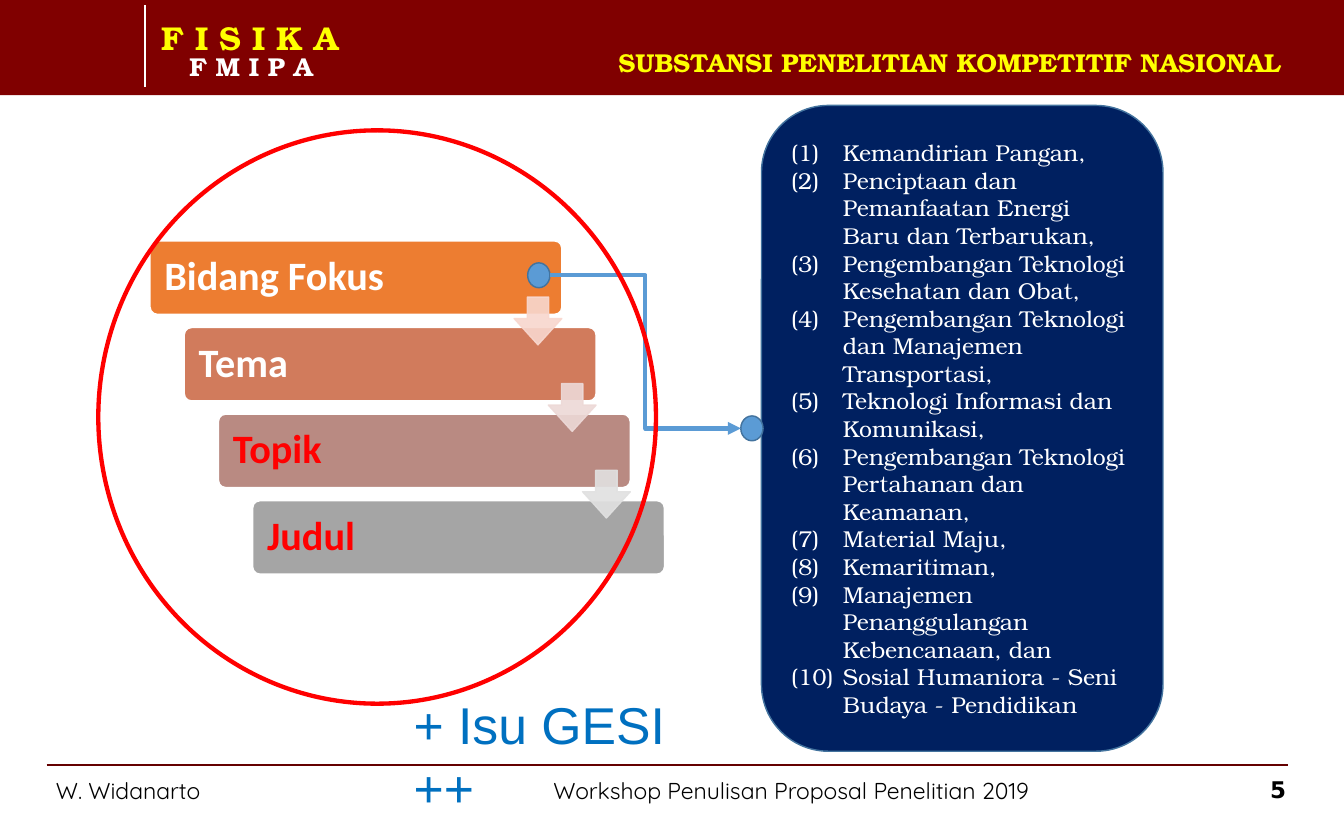
import pptx
import pptx.util
import pptx.dml.color
import pptx.enum.shapes
import pptx.enum.text
import pptx.oxml.ns
import lxml.etree

Pt = pptx.util.Pt
SHAPE = pptx.enum.shapes.MSO_SHAPE
CONNECTOR = pptx.enum.shapes.MSO_CONNECTOR
ALIGN = pptx.enum.text.PP_ALIGN
ANCHOR = pptx.enum.text.MSO_ANCHOR
qn = pptx.oxml.ns.qn

# Content
TITLE = "SUBSTANSI PENELITIAN KOMPETITIF NASIONAL"
UNIT = [("F I S I K A", 23, "yellow", ALIGN.LEFT), ("F M I P A", 18, "white", ALIGN.CENTER)]
AUTHOR = "W. Widanarto"
EVENT = "Workshop Penulisan Proposal Penelitian 2019"
PAGE = "5"
ISSUE = "+ Isu GESI ++"
# label, bar colour, text colour, colour of the arrow below
STEPS = [
    ("Bidang Fokus", "orange", "white", "arrow1"),
    ("Tema", "terracotta", "white", "arrow2"),
    ("Topik", "rose", "red", "arrow3"),
    ("Judul", "grey", "red", None),
]
FOCUS_AREAS = [
    "Kemandirian Pangan,",
    "Penciptaan dan Pemanfaatan Energi Baru dan Terbarukan,",
    "Pengembangan Teknologi Kesehatan dan Obat,",
    "Pengembangan Teknologi dan Manajemen Transportasi,",
    "Teknologi Informasi dan Komunikasi,",
    "Pengembangan Teknologi Pertahanan dan Keamanan,",
    "Material Maju,",
    "Kemaritiman,",
    "Manajemen Penanggulangan Kebencanaan, dan",
    "Sosial Humaniora - Seni Budaya - Pendidikan",
]
COLORS = {
    "maroon": "800000", "rule": "640000", "yellow": "FFFF00", "white": "FFFFFF",
    "black": "000000", "red": "FF0000", "orange": "ED7D31", "terracotta": "D17B5C",
    "rose": "B98A82", "grey": "A5A5A5", "arrow1": "F8D7CE", "arrow2": "EDD9D7",
    "arrow3": "E1E1E1", "navy": "002060", "outline": "43739E", "blue": "5B9BD5",
    "issue": "0070C0",
}
SERIF, SANS = "TeX Gyre Bonum", "Quicksand"

prs = pptx.Presentation()
prs.slide_width, prs.slide_height = Pt(935.28), Pt(578.16)
s = prs.slides.add_slide(prs.slide_layouts[6])


def rgb(name):
    return pptx.dml.color.RGBColor.from_string(COLORS[name])


def add_text(tf, text, font, size, color, bold=False, align=ALIGN.LEFT, spacing=None, numbered=False):
    """Add one paragraph, filling the empty first one before adding more."""
    p = tf.paragraphs[0] if not tf.paragraphs[0].runs else tf.add_paragraph()
    p.alignment = align
    if spacing:
        p.line_spacing = spacing
    if numbered:
        pPr = p._p.get_or_add_pPr()
        pPr.set("marL", str(Pt(36)))
        pPr.set("indent", str(-Pt(36)))
        lxml.etree.SubElement(pPr, qn("a:buFont"), typeface="+mj-lt")
        lxml.etree.SubElement(pPr, qn("a:buAutoNum"), type="arabicParenBoth")
    r = p.add_run()
    r.text = text
    r.font.name, r.font.size, r.font.bold = font, Pt(size), bold
    r.font.color.rgb = rgb(color)


def set_frame(tf, insets, anchor=ANCHOR.TOP):
    tf.word_wrap = True
    tf.vertical_anchor = anchor
    tf.margin_left = tf.margin_right = Pt(insets[0])
    tf.margin_top = tf.margin_bottom = Pt(insets[1])
    return tf


def add_box(x, y, w, h, insets=(7.92, 4.32), anchor=ANCHOR.TOP):
    return set_frame(s.shapes.add_textbox(Pt(x), Pt(y), Pt(w), Pt(h)).text_frame, insets, anchor)


def add_shape(kind, x, y, w, h, fill=None, line=None, width=1, adj=(), alpha=None):
    sp = s.shapes.add_shape(kind, Pt(x), Pt(y), Pt(w), Pt(h))
    sp.shadow.inherit = False
    for i, value in enumerate(adj):
        sp.adjustments[i] = value
    if fill:
        sp.fill.solid()
        sp.fill.fore_color.rgb = rgb(fill)
    else:
        sp.fill.background()
    if line:
        sp.line.color.rgb = rgb(line)
        sp.line.width = Pt(width)
    else:
        sp.line.fill.background()
    if alpha:
        for clr in sp._element.spPr.iter(qn("a:srgbClr")):
            lxml.etree.SubElement(clr, qn("a:alpha"), val=str(alpha * 1000))
    return sp


def add_line(kind, x1, y1, x2, y2, color, width, arrow=False):
    c = s.shapes.add_connector(kind, Pt(x1), Pt(y1), Pt(x2), Pt(y2))
    c.line.color.rgb = rgb(color)
    c.line.width = Pt(width)
    if arrow:
        lxml.etree.SubElement(c.line._get_or_add_ln(), qn("a:tailEnd"), type="triangle")
    lxml.etree.SubElement(c._element.spPr, qn("a:effectLst"))


# Header band
add_shape(SHAPE.RECTANGLE, -0.7, 0, 936.7, 66.2, "maroon")
add_line(CONNECTOR.STRAIGHT, 100.8, 3.6, 100.8, 60.5, "white", 1.5)
tf = add_box(112.3, 17.3, 124.6, 39.6, insets=(0, 0))
for text, size, color, align in UNIT:
    add_text(tf, text, SERIF, size, color, bold=True, align=align, spacing=0.8)
tf = add_box(354.2, 23.8, 545, 38.9, anchor=ANCHOR.MIDDLE)
add_text(tf, TITLE, SERIF, 18, "yellow", bold=True, align=ALIGN.RIGHT)

# Footer
add_line(CONNECTOR.STRAIGHT, 32.4, 532.1, 896.4, 532.1, "rule", 1)
for text, x, w in [(AUTHOR, 31, 123.8), (EVENT, 377.3, 369.4)]:
    add_text(add_box(x, 540, w, 23.8), text, SANS, 16, "black", spacing=0.8)
tf = add_box(848.9, 535, 46.1, 32.4, insets=(0, 4.32))
add_text(tf, PAGE, "DejaVu Sans", 16, "black", bold=True, align=ALIGN.RIGHT)

# Staircase of bars, then the arrows between them
BAR_X, BAR_Y, BAR_W, BAR_H = 104.4, 167.6, 286.6, 51.1
STEP_X, STEP_Y, ARROW = 23.8, 60.25, 33.2
corners = [(BAR_X + i * STEP_X, BAR_Y + i * STEP_Y) for i in range(len(STEPS))]
for (x, y), (label, fill, color, _) in zip(corners, STEPS):
    sp = add_shape(SHAPE.ROUNDED_RECTANGLE, x, y, BAR_W, BAR_H, fill, "white", adj=[0.1])
    tf = set_frame(sp.text_frame, (8.6, 0), ANCHOR.MIDDLE)
    add_text(tf, label, "Calibri", 28, color, bold=True, spacing=0.9)
for (x, y), (*_, tint) in zip(corners, STEPS):
    if tint:
        add_shape(SHAPE.DOWN_ARROW, x + BAR_W - ARROW, y + 39.1, ARROW, ARROW,
                  tint, tint, adj=[0.45, 0.55], alpha=90)

# Panel of focus areas
panel = add_shape(SHAPE.ROUNDED_RECTANGLE, 529.9, 73.4, 279.4, 449.3, "navy", "outline")
tf = set_frame(panel.text_frame, (7.2, 3.6), ANCHOR.MIDDLE)
for area in FOCUS_AREAS:
    add_text(tf, area, SERIF, 16, "white", numbered=True)

# Link from the first bar to the panel
DOT_W, DOT_H = 15.5, 17.3
start, end = (367.2, 182.9), (515.5, 289.4)
for x, y in (end, start):
    add_shape(SHAPE.OVAL, x, y, DOT_W, DOT_H, "blue", "outline")
add_line(CONNECTOR.ELBOW, start[0] + DOT_W, start[1] + DOT_H / 2,
         end[0], end[1] + DOT_H / 2, "blue", 3, arrow=True)

# Ring and added issue
add_shape(SHAPE.OVAL, 68.4, 90.7, 388.1, 398.9, line="red", width=3)
add_text(add_box(280.8, 478.8, 197.3, 48.2, insets=(7.2, 3.6)), ISSUE, "Arial", 36, "issue")

prs.save("out.pptx")
